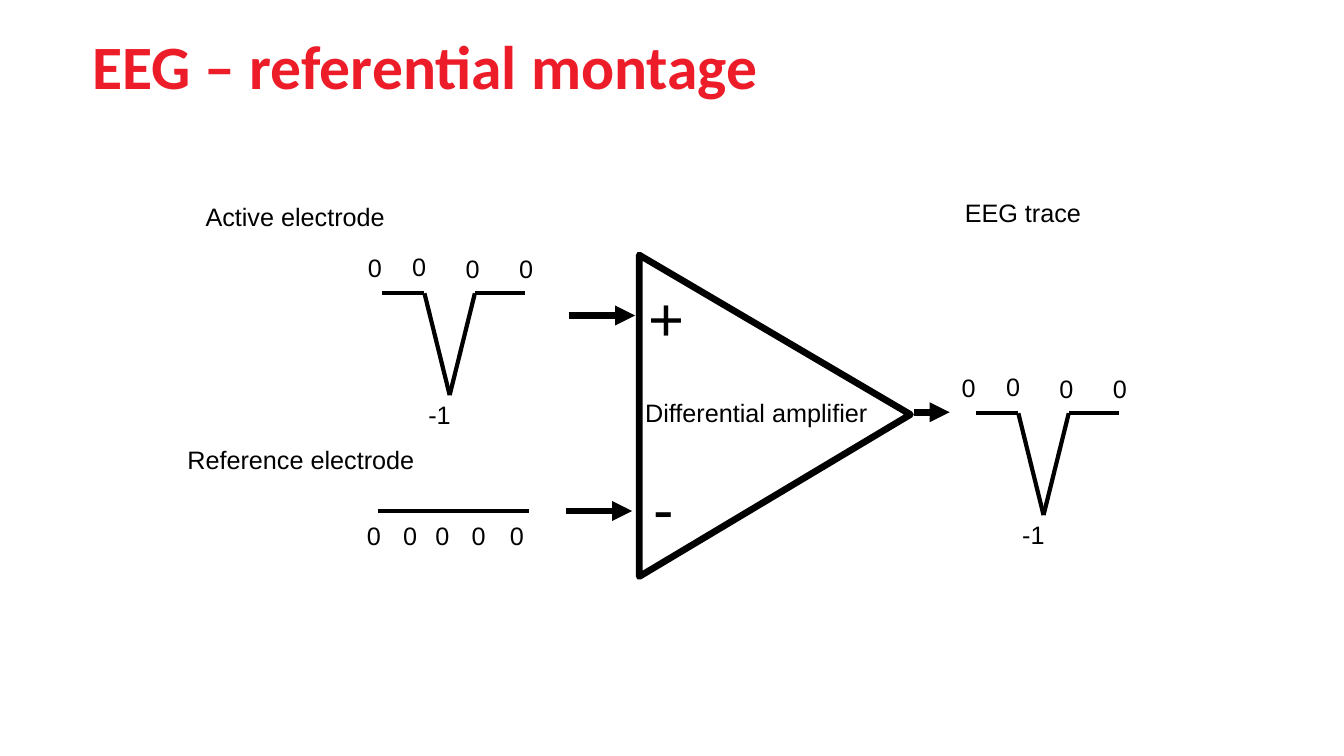
from dataclasses import dataclass
from itertools import pairwise

from lxml import etree
from pptx import Presentation
from pptx.dml.color import RGBColor
from pptx.enum.shapes import MSO_CONNECTOR, MSO_SHAPE
from pptx.enum.text import MSO_AUTO_SIZE
from pptx.oxml.ns import qn
from pptx.util import Inches, Pt

STRAIGHT = MSO_CONNECTOR.STRAIGHT
TRIANGLE = MSO_SHAPE.ISOSCELES_TRIANGLE
GROW = MSO_AUTO_SIZE.SHAPE_TO_FIT_TEXT


@dataclass(frozen=True)
class Theme:
    ink: RGBColor = RGBColor(0x00, 0x00, 0x00)
    accent: RGBColor = RGBColor(0xED, 0x1C, 0x29)
    body_font: str = "Arial"
    title_font: str = "Calibri"
    body_size: float = 18
    large_size: float = 44
    trace_width: float = 3
    heavy_width: float = 4.75


THEME = Theme()
BODY = {"name": THEME.body_font, "size": Pt(THEME.body_size), "color": THEME.ink}
SIGN = BODY | {"size": Pt(THEME.large_size)}
TITLE = {"name": THEME.title_font, "size": Pt(THEME.large_size),
         "color": THEME.accent, "bold": True}


@dataclass(frozen=True)
class Label:
    text: str
    left: float
    top: float
    width: float
    height: float = 0.4
    wrap: bool = True


@dataclass(frozen=True)
class Arrow:
    left: float
    right: float
    y: float


DIGIT_WIDTH = 0.34

TITLE_LABEL = Label("EEG – referential montage", 0.82, 0.23, 9.31, 0.84)
CAPTIONS = [
    Label("Reference electrode", 1.76, 4.36, 2.72),
    Label("Active electrode", 1.94, 1.95, 2.03),
    Label("EEG trace", 9.47, 1.91, 2.41),
    Label("Differential amplifier", 6.3, 3.89, 2.41),
]
SIGNS = [
    Label("+", 6.33, 2.73, 0.56, 0.84, wrap=False),
    Label("-", 6.38, 4.61, 0.41, 0.84, wrap=False),
]
ARROWS = [Arrow(5.64, 6.3, 3.13), Arrow(5.61, 6.27, 5.07), Arrow(9.07, 9.42, 4.09)]

# Start of each deflected trace, and its shape relative to that start
WAVE_STARTS = [(3.79, 2.91), (9.68, 4.1)]
WAVE_POINTS = [(0, 0), (0.42, 0), (0.67, 1.01), (0.92, 0), (1.42, 0)]
WAVE_LABELS = [
    Label("-1", 0.36, 1, 0.43),
    Label("0", -0.24, -0.46, DIGIT_WIDTH),
    Label("0", 0.2, -0.47, DIGIT_WIDTH),
    Label("0", 0.73, -0.45, DIGIT_WIDTH),
    Label("0", 1.26, -0.45, DIGIT_WIDTH),
]

# Flat trace of the reference electrode
FLAT_START = (3.75, 5.07)
FLAT_POINTS = [(0, 0), (1.5, 0)]
FLAT_LABELS = [Label("0", x, 0.04, DIGIT_WIDTH)
               for x in (-0.21, 0.15, 0.47, 0.83, 1.21)]


def add_label(shapes, label: Label, style: dict, x: float = 0, y: float = 0) -> None:
    box = shapes.add_textbox(Inches(x + label.left), Inches(y + label.top),
                             Inches(label.width), Inches(label.height))
    frame = box.text_frame
    frame.word_wrap = label.wrap
    frame.auto_size = GROW
    span = frame.paragraphs[0].add_run()
    span.text = label.text
    for name, value in style.items():
        if name == "color":
            span.font.color.rgb = value
        else:
            setattr(span.font, name, value)


def add_line(shapes, start: tuple, end: tuple, width: float, arrow: bool = False) -> None:
    line = shapes.add_connector(STRAIGHT, *map(Inches, (*start, *end)))
    line.line.color.rgb = THEME.ink
    line.line.width = Pt(width)
    if arrow:
        etree.SubElement(line.line._get_or_add_ln(), qn("a:tailEnd"), type="triangle")
    etree.SubElement(line._element.spPr, qn("a:effectLst"))


def add_trace(page, start: tuple, points: list, labels: list[Label]) -> None:
    """Draw a signal and its sample values as one group."""
    shapes = page.shapes.add_group_shape().shapes
    x, y = start
    corners = [(x + across, y + down) for across, down in points]
    for first, second in pairwise(corners):
        add_line(shapes, first, second, THEME.trace_width)
    for label in labels:
        add_label(shapes, label, BODY | {}, x, y) if not label.wrap else add_label(
            shapes, Label(label.text, label.left, label.top, label.width, wrap=False),
            BODY, x, y)


def add_amplifier(page) -> None:
    body = page.shapes.add_shape(TRIANGLE, Inches(6.09), Inches(2.78),
                                 Inches(3.19), Inches(2.69))
    body.rotation = 90
    body.adjustments[0] = 0.496
    body.shadow.inherit = False
    body.fill.background()
    body.line.color.rgb = THEME.ink
    body.line.width = Pt(THEME.heavy_width)


def main() -> None:
    deck = Presentation()
    deck.slide_width, deck.slide_height = Inches(13.33), Inches(7.5)
    page = deck.slides.add_slide(deck.slide_layouts[6])

    # Amplifier with its inputs and output
    add_amplifier(page)
    for sign in SIGNS:
        add_label(page.shapes, sign, SIGN)
    for arrow in ARROWS:
        add_line(page.shapes, (arrow.left, arrow.y), (arrow.right, arrow.y),
                 THEME.heavy_width, arrow=True)

    # Signals
    add_trace(page, FLAT_START, FLAT_POINTS, FLAT_LABELS)
    for start in WAVE_STARTS:
        add_trace(page, start, WAVE_POINTS, WAVE_LABELS)

    # Captions and title
    for caption in CAPTIONS:
        add_label(page.shapes, caption, BODY)
    add_label(page.shapes, TITLE_LABEL, TITLE)

    deck.save("out.pptx")


if __name__ == "__main__":
    main()
